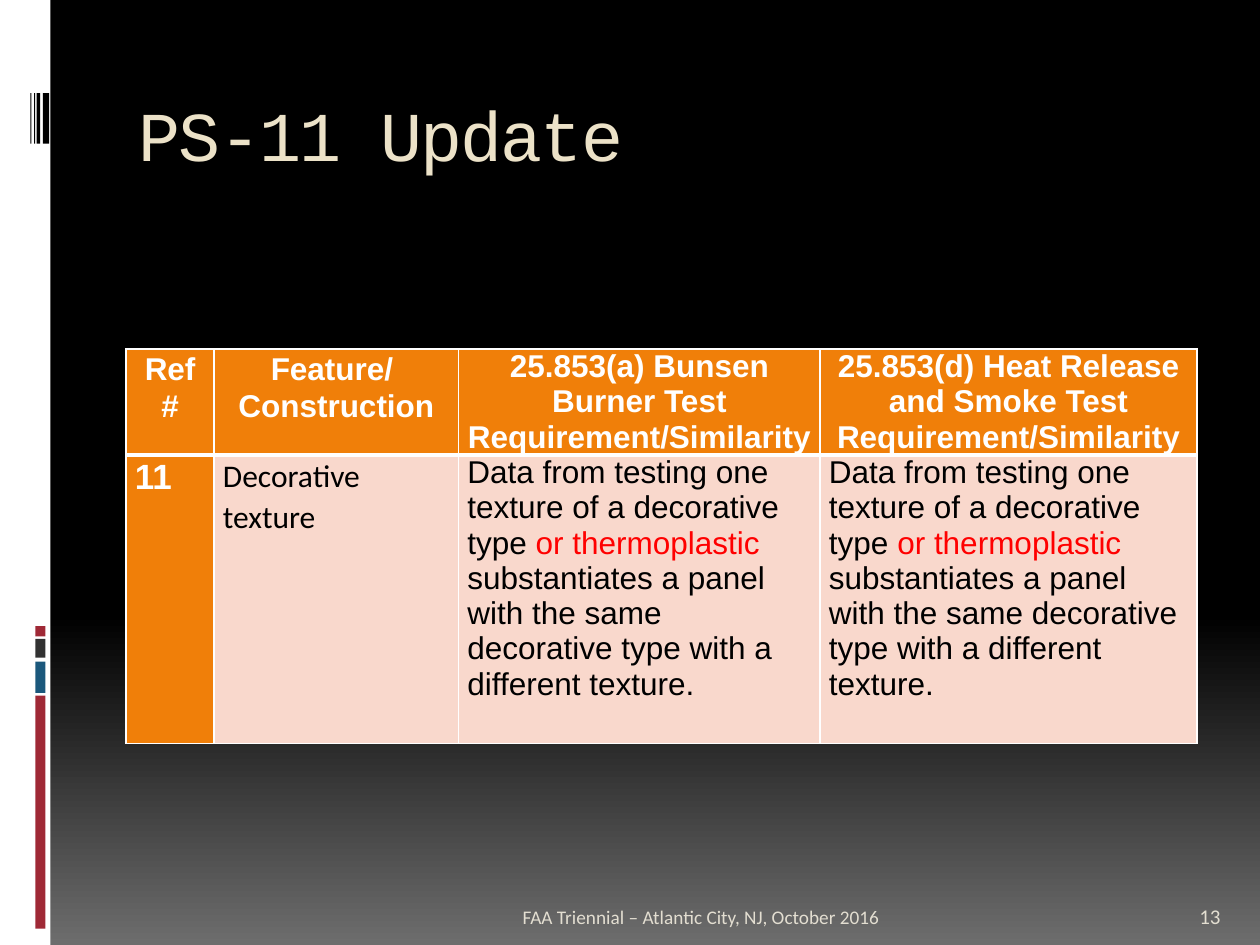
"""Build the PS-11 Update slide: a side band, a title, a requirements table and a footer."""
from lxml.etree import SubElement
from pptx import Presentation
from pptx.dml.color import RGBColor
from pptx.enum.shapes import MSO_SHAPE
from pptx.enum.text import MSO_ANCHOR, PP_ALIGN
from pptx.oxml.ns import qn
from pptx.util import Inches, Pt


def color(value):
    return RGBColor.from_string(value)


def add_run(p, text, size, fill, font="Arial", bold=False):
    r = p.add_run()
    r.text = text
    r.font.size = Pt(size)
    r.font.name = font
    r.font.bold = bold
    r.font.color.rgb = color(fill)
    return r


prs = Presentation()
prs.slide_width, prs.slide_height = Inches(10), Inches(7.5)
s = prs.slides.add_slide(prs.slide_layouts[5])

bg = s.background.fill
bg.gradient()
bg.gradient_angle = 270
for stop, (position, value) in zip(bg.gradient_stops, [(0.65, "000000"), (1, "6D6D6D")]):
    stop.position = position
    stop.color.rgb = color(value)

bars = [(0, 0, 0.4, 7.5, "FFFFFF")]
bars += [(0.28, top, 0.08, height, fill) for top, height, fill in [
    (5.52, 1.85, "9F2936"), (5.25, 0.25, "1B587C"),
    (5.07, 0.15, "323232"), (4.97, 0.08, "9F2936")]]
bars += [(left, 0.74, width, 0.4, "000000") for left, width in [
    (0.34, 0.05), (0.29, 0.03), (0.27, 0.01), (0.24, 0.01)]]
for *box, fill in bars:
    sp = s.shapes.add_shape(MSO_SHAPE.RECTANGLE, *map(Inches, box))
    sp.shadow.inherit = False
    sp.fill.solid()
    sp.fill.fore_color.rgb = color(fill)
    sp.line.fill.background()

title = s.shapes.title
title.left, title.top, title.width, title.height = map(Inches, (1, 0.56, 8.5, 1))
title.text_frame.vertical_anchor = MSO_ANCHOR.MIDDLE
p = title.text_frame.paragraphs[0]
p.alignment = PP_ALIGN.LEFT
r = add_run(p, "PS-11 Update", 40, "ECE2C8", "Courier New")
r.font._element.set("spc", "-100")

finding = [
    ("Data from testing one texture of a decorative type ", 18, "000000"),
    ("or thermoplastic ", 18, "FF0000"),
    ("substantiates a panel with the same decorative type with a different texture.", 18, "000000"),
]
headers = ["Ref #", "Feature/ \nConstruction",
           "25.853(a) Bunsen Burner Test Requirement/Similarity",
           "25.853(d) Heat Release and Smoke Test Requirement/Similarity"]
rows = [
    [[(text, 18, "FFFFFF", "Arial", True)] for text in headers],
    [[("11", 20, "FFFFFF", "Arial", True)],
     [("Decorative texture", 18, "000000", "Calibri")], finding, finding],
]
widths, heights = [0.7, 1.94, 2.87, 2.99], [0.84, 2.29]
table = s.shapes.add_table(len(rows), len(widths), Inches(1), Inches(2.77),
                           Inches(sum(widths)), Inches(sum(heights))).table
for column, width in zip(table.columns, widths):
    column.width = Inches(width)
for row, height in zip(table.rows, heights):
    row.height = Inches(height)

for i, row in enumerate(rows):
    for j, runs in enumerate(row):
        cell = table.cell(i, j)
        cell.margin_left = cell.margin_right = Inches(0.07)
        cell.margin_top = cell.margin_bottom = 0
        for side in "LRTB":
            thick = (i, side) in [(0, "B"), (1, "T")]
            ln = SubElement(cell._tc.get_or_add_tcPr(), qn("a:ln" + side), w=str(Pt(3 if thick else 1)))
            SubElement(SubElement(ln, qn("a:solidFill")), qn("a:srgbClr"), val="FFFFFF")
        cell.fill.solid()
        cell.fill.fore_color.rgb = color("F07F09" if i == 0 or j == 0 else "F9D8CC")
        p = cell.text_frame.paragraphs[0]
        p.alignment = PP_ALIGN.CENTER if i == 0 else PP_ALIGN.LEFT
        p.line_spacing = 1.07 if j < 2 else 1.0
        for text, *style in runs:
            for k, line in enumerate(text.split("\n")):
                if k:
                    p.add_line_break()
                add_run(p, line, *style)

for left, width, align, text, size in [
        (1, 6.08, PP_ALIGN.RIGHT, "FAA Triennial – Atlantic City, NJ, October 2016", 11),
        (9.42, 0.5, PP_ALIGN.LEFT, "13", 12)]:
    tf = s.shapes.add_textbox(*map(Inches, (left, 7.02, width, 0.4))).text_frame
    tf.word_wrap = True
    tf.vertical_anchor = MSO_ANCHOR.BOTTOM
    p = tf.paragraphs[0]
    p.alignment = align
    add_run(p, text, size, "E3DED1", "Calibri")

prs.save("out.pptx")
